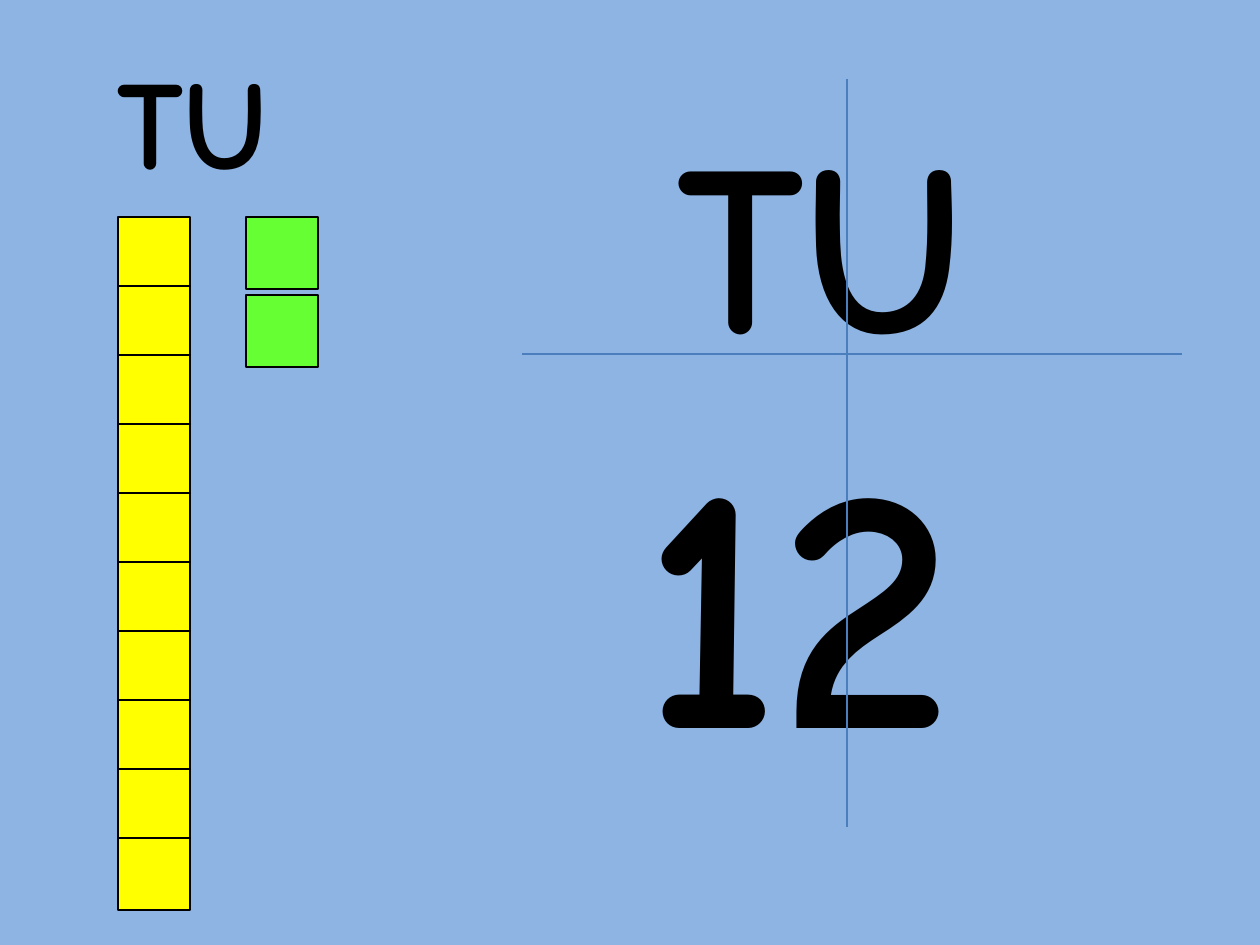
from dataclasses import dataclass

from lxml.etree import SubElement
from pptx import Presentation
from pptx.dml.color import RGBColor
from pptx.enum.shapes import MSO_CONNECTOR, MSO_SHAPE
from pptx.oxml.ns import qn
from pptx.util import Emu, Pt


@dataclass(frozen=True)
class Theme:
    background: str = "8EB4E3"
    ten: str = "FFFF00"
    unit: str = "66FF33"
    ink: str = "000000"
    rule: str = "4B7EBC"
    font: str = "Comic Neue"
    small_heading: int = 72
    large_heading: int = 138
    number: int = 199
    line: float = 0.75


THEME = Theme()
SQUARE = 72


def px(length):
    return Emu(round(length * 914400 / 126))


def color(value):
    return RGBColor.from_string(value)


def add_text(slide, text, box, *, size, font=THEME.font, ink=THEME.ink, bold=True):
    shape = slide.shapes.add_textbox(*map(px, box))
    shape.text_frame.word_wrap = True
    run = shape.text_frame.paragraphs[0].add_run()
    run.text = text
    run.font.name = font
    run.font.size = Pt(size)
    run.font.bold = bold
    run.font.color.rgb = color(ink)


def add_squares(shapes, left, top, *, count, pitch, fill):
    for index in range(count):
        box = (left, top + index * pitch, SQUARE, SQUARE)
        shape = shapes.add_shape(MSO_SHAPE.RECTANGLE, *map(px, box))
        shape.shadow.inherit = False
        shape.fill.solid()
        shape.fill.fore_color.rgb = color(fill)
        shape.line.color.rgb = color(THEME.ink)
        shape.line.width = Pt(THEME.line)


def add_rule(slide, *ends):
    connector = slide.shapes.add_connector(MSO_CONNECTOR.STRAIGHT, *map(px, ends))
    connector.line.color.rgb = color(THEME.rule)
    connector.line.width = Pt(THEME.line)
    SubElement(connector._element.spPr, qn("a:effectLst"))


def add_blocks(slide, left, top):
    squares_top = top + 180
    ten = slide.shapes.add_group_shape()
    add_squares(ten.shapes, left + 13, squares_top, count=10, pitch=69, fill=THEME.ten)
    add_squares(slide.shapes, left + 141, squares_top, count=2, pitch=78, fill=THEME.unit)
    add_text(slide, "TU", (left, top, 728, 165), size=THEME.small_heading)


def add_place_value_chart(slide, left, top, width, height):
    add_text(slide, "12", (left + 108, top + 295, 473, 435), size=THEME.number)
    add_text(slide, "TU", (left + 143, top + 7, 728, 305), size=THEME.large_heading)
    middle_x, middle_y = left + 325, top + 275
    add_rule(slide, middle_x, top, middle_x, top + height)
    add_rule(slide, left, middle_y, left + width, middle_y)


def main():
    presentation = Presentation()
    presentation.slide_width, presentation.slide_height = px(1260), px(945)
    slide = presentation.slides.add_slide(presentation.slide_layouts[6])
    slide.background.fill.solid()
    slide.background.fill.fore_color.rgb = color(THEME.background)
    add_blocks(slide, 105, 37)
    add_place_value_chart(slide, 522, 79, 660, 748)
    presentation.save("out.pptx")


if __name__ == "__main__":
    main()
